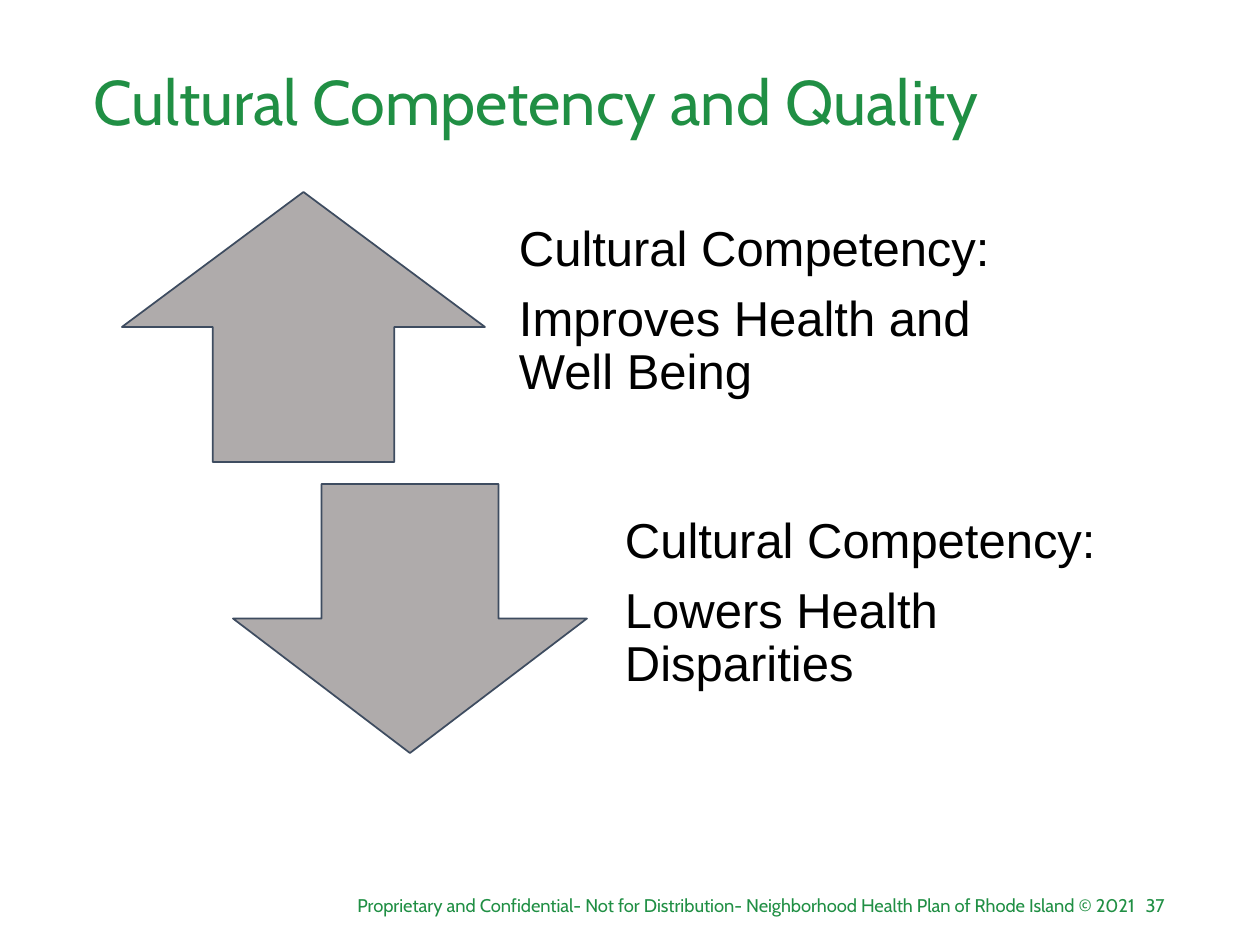
from pptx import Presentation, util as u
from pptx.dml.color import RGBColor
from pptx.enum import shapes, text

SCALE = 914400 / 126  # EMU per px
COLORS = {"green": "208F44", "gray": "AFABAB", "edge": "3E4C60", "black": "000000"}
ARROW = shapes.MSO_SHAPE
ALIGN = text.PP_ALIGN

TITLE = "Cultural Competency and Quality "
FOOTER = [
    ("37", (1119, 888, 58, 35)),
    ("Proprietary and Confidential- Not for Distribution- "
     "Neighborhood Health Plan of Rhode Island © 2021", (315, 888, 833, 35)),
]
# arrow kind, arrow box, text left and top, lines
EFFECTS = [
    (ARROW.UP_ARROW, (122, 192, 363, 270), (491, 192),
     ["Cultural Competency:", "Improves Health and Well Being"]),
    (ARROW.DOWN_ARROW, (233, 484, 354, 269), (597, 484),
     ["Cultural Competency:", "Lowers Health Disparities"]),
]
TEXT_SIZE = (600, 268)
INSET = 28


def px(n):
    return u.Emu(round(n * SCALE))


def rgb(name):
    return RGBColor.from_string(COLORS[name])


def add_text(slide, box, lines, font, size, color, align=ALIGN.LEFT,
             anchor=text.MSO_ANCHOR.TOP, inset=None, line=1.0, after=0):
    frame = slide.shapes.add_textbox(*map(px, box)).text_frame
    frame.word_wrap = True
    frame.vertical_anchor = anchor
    if inset is not None:
        frame.margin_left = frame.margin_right = frame.margin_bottom = px(inset)
        frame.margin_top = 0
    for i, words in enumerate(lines):
        para = frame.add_paragraph() if i else frame.paragraphs[0]
        para.alignment = align
        para.line_spacing = line
        para.space_after = u.Pt(after)
        run = para.add_run()
        run.text = words
        run.font.name = font
        run.font.size = u.Pt(size)
        run.font.color.rgb = rgb(color)


def add_arrow(slide, kind, box):
    arrow = slide.shapes.add_shape(kind, *map(px, box))
    arrow.shadow.inherit = False
    arrow.fill.solid()
    arrow.fill.fore_color.rgb = rgb("gray")
    arrow.line.color.rgb = rgb("edge")
    arrow.line.width = u.Pt(1)


def main():
    deck = Presentation()
    deck.slide_width, deck.slide_height = px(1260), px(945)
    slide = deck.slides.add_slide(deck.slide_layouts[6])
    middle = text.MSO_ANCHOR.MIDDLE

    for words, box in FOOTER:
        add_text(slide, box, [words], "Cabin", 10.5, "green", ALIGN.RIGHT)
    add_text(slide, (0, 14, 1086, 183), [TITLE], "Cabin", 36, "green",
             ALIGN.CENTER, middle, line=0.9)
    for kind, box, spot, lines in EFFECTS:
        add_arrow(slide, kind, box)
        add_text(slide, spot + TEXT_SIZE, lines, "Arial", 28, "black",
                 anchor=middle, inset=INSET, line=0.9, after=10)
    deck.save("out.pptx")


if __name__ == "__main__":
    main()
